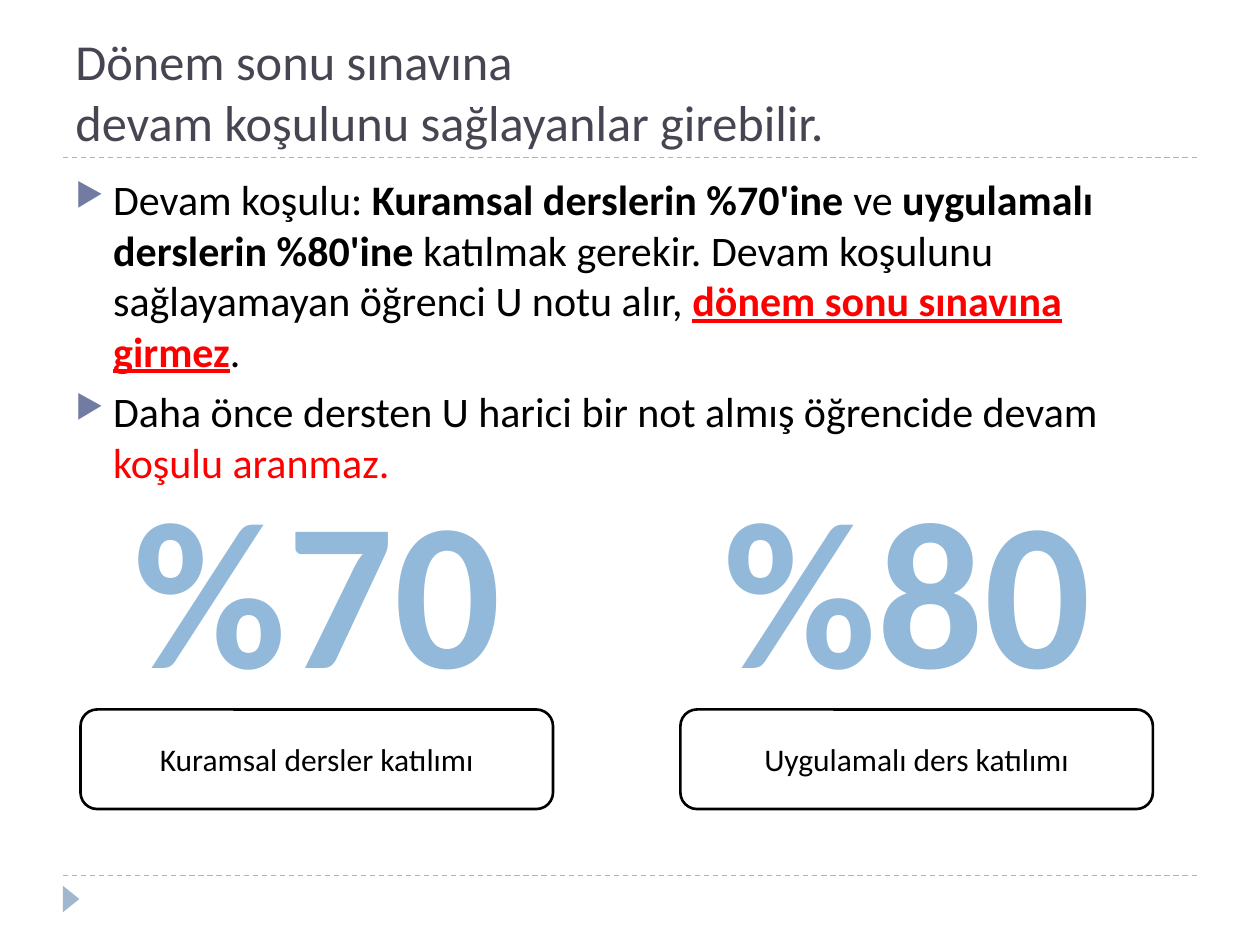
"""Build the slide on attendance rules for the final exam."""
from lxml import etree
from pptx import Presentation
from pptx.dml.color import RGBColor
from pptx.enum.dml import MSO_LINE
from pptx.enum.shapes import MSO_CONNECTOR, MSO_SHAPE
from pptx.enum.text import MSO_ANCHOR, PP_ALIGN
from pptx.oxml.ns import qn
from pptx.util import Pt

DASH = MSO_LINE.DASH
LINE = MSO_CONNECTOR.STRAIGHT
ROUND, ARROW = MSO_SHAPE.ROUNDED_RECTANGLE, MSO_SHAPE.ISOSCELES_TRIANGLE
TOP, MIDDLE, BOTTOM = MSO_ANCHOR.TOP, MSO_ANCHOR.MIDDLE, MSO_ANCHOR.BOTTOM
LEFT, CENTER = PP_ALIGN.LEFT, PP_ALIGN.CENTER

COLORS = {"title": "464653", "text": "000000", "alert": "FF0000", "rule": "9FB8CD",
          "bullet": "727CA3", "rate": "92B9DA", "box": "FFFFFF"}
FONT = "Calibri"

TITLE = ["Dönem sonu sınavına", "devam koşulunu sağlayanlar girebilir."]
POINTS = [
    [("Devam koşulu: ", ""), ("Kuramsal derslerin %70'ine", "bold"), (" ve ", ""),
     ("uygulamalı derslerin %80'ine", "bold"),
     (" katılmak gerekir. Devam koşulunu sağlayamayan öğrenci U notu alır, ", ""),
     ("dönem sonu sınavına girmez", "bold under alert"), (".", "")],
    [("Daha önce dersten U harici bir not almış öğrencide devam ", ""),
     ("koşulu aranmaz.", "alert")],
]
RATES = [("%70", 68.4, "Kuramsal dersler katılımı", 46),
         ("%80", 405.4, "Uygulamalı ders katılımı", 388.8)]
RULES = [90, 500.4]


def rgb(name):
    return RGBColor.from_string(COLORS[name])


def add_run(para, text, size, color, bold=False, under=False):
    run = para.add_run()
    run.text = text
    font = run.font
    font.name, font.size, font.bold, font.underline = FONT, Pt(size), bold, under
    font.color.rgb = rgb(color)
    return run


def set_frame(shape, anchor, align, wrap=True):
    frame = shape.text_frame
    frame.word_wrap, frame.vertical_anchor = wrap, anchor
    frame.paragraphs[0].alignment = align
    return frame


def add_text(slide, area, anchor=TOP, align=LEFT, wrap=True):
    box = slide.shapes.add_textbox(*map(Pt, area))
    return set_frame(box, anchor, align, wrap)


def add_shape(slide, kind, area, fill):
    shape = slide.shapes.add_shape(kind, *map(Pt, area))
    shape.shadow.inherit = False
    shape.fill.solid()
    shape.fill.fore_color.rgb = rgb(fill)
    return shape


def add_bullet(para):
    para.space_before = Pt(6)
    props = para._p.get_or_add_pPr()
    props.set("marL", str(Pt(21.6)))
    props.set("indent", str(-Pt(21.6)))
    color = etree.SubElement(props, qn("a:buClr"))
    etree.SubElement(color, qn("a:srgbClr"), val=COLORS["bullet"])
    etree.SubElement(props, qn("a:buSzPct"), val="76000")
    etree.SubElement(props, qn("a:buChar"), char="▶")


def add_rule(slide, y):
    rule = slide.shapes.add_connector(LINE, Pt(36), Pt(y), Pt(684), Pt(y))
    rule.line.color.rgb = rgb("rule")
    rule.line.width = Pt(0.75)
    rule.line.dash_style = DASH
    etree.SubElement(rule._element.spPr, qn("a:effectLst"))


def add_title(slide):
    para = add_text(slide, (36, 12.2, 648, 77.8), BOTTOM).paragraphs[0]
    for i, line in enumerate(TITLE):
        if i:
            para.add_line_break()
        add_run(para, line, 28.8, "title")


def add_points(slide):
    frame = add_text(slide, (36, 95.8, 648, 388.8))
    for i, point in enumerate(POINTS):
        para = frame.add_paragraph() if i else frame.paragraphs[0]
        add_bullet(para)
        for text, style in point:
            color = "alert" if "alert" in style else "text"
            add_run(para, text, 24, color, "bold" in style, "under" in style)


def add_rate(slide, rate, x, label, left):
    frame = add_text(slide, (x, 258.5, 226, 152.6), align=CENTER, wrap=False)
    run = add_run(frame.paragraphs[0], rate, 120, "rate", True)
    run.font._element.set("spc", "50")
    box = add_shape(slide, ROUND, (left, 405.4, 270, 56.9), "box")
    box.line.color.rgb = rgb("text")
    box.line.width = Pt(1.5)
    add_run(set_frame(box, MIDDLE, CENTER).paragraphs[0], label, 18, "text")


def main():
    deck = Presentation()
    deck.slide_width, deck.slide_height = Pt(720), Pt(540)
    slide = deck.slides.add_slide(deck.slide_layouts[6])
    for y in RULES:
        add_rule(slide, y)
    arrow = add_shape(slide, ARROW, (33.1, 509, 15.1, 9.4), "rule")
    arrow.line.fill.background()
    arrow.rotation = 90
    add_title(slide)
    add_points(slide)
    for rate in RATES:
        add_rate(slide, *rate)
    deck.save("out.pptx")


if __name__ == "__main__":
    main()
